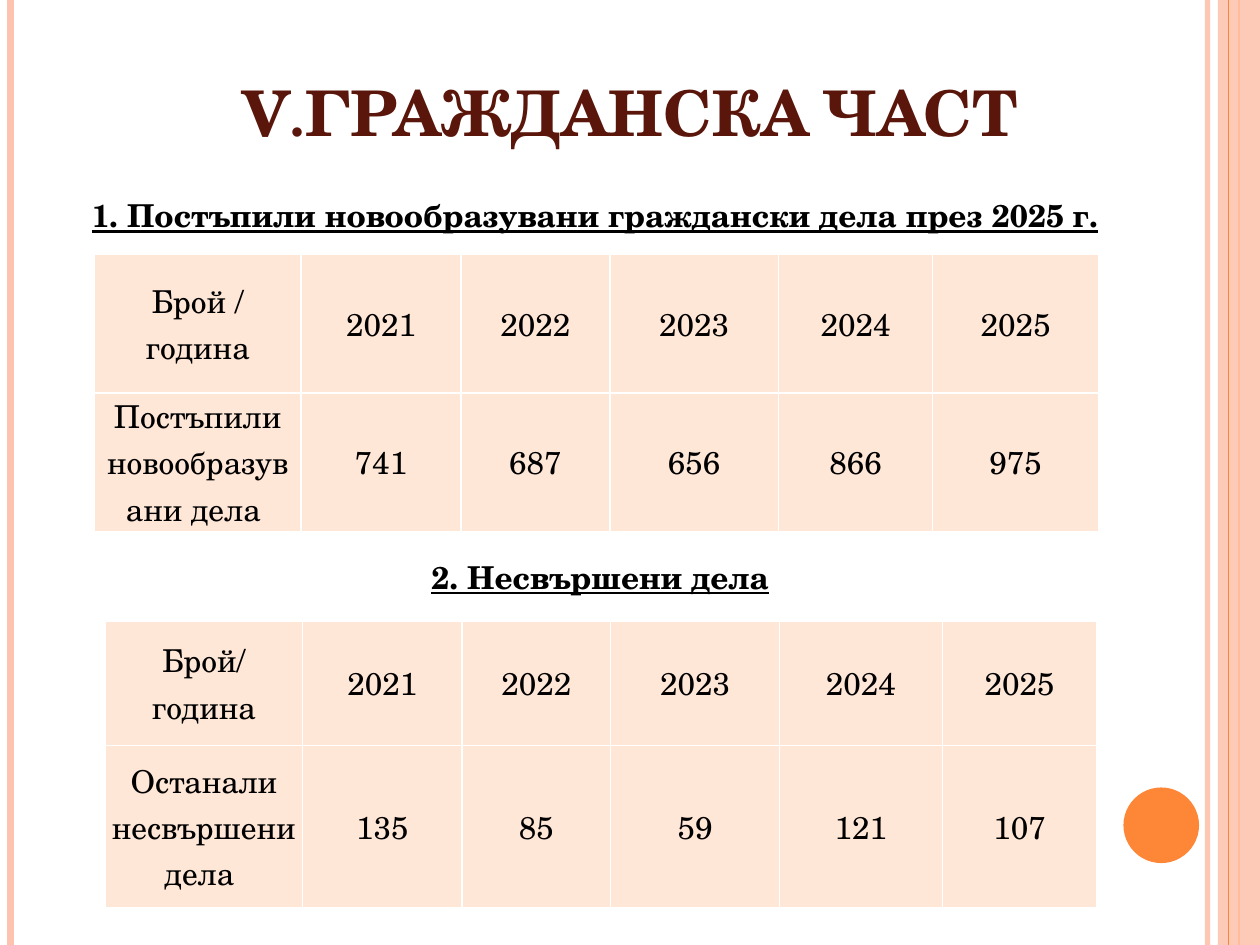
from dataclasses import dataclass

from lxml.etree import SubElement
from pptx import Presentation
from pptx.dml.color import RGBColor as Rgb
from pptx.enum.shapes import MSO_CONNECTOR as Link, MSO_SHAPE as Kind
from pptx.enum.text import MSO_ANCHOR as Anchor, PP_ALIGN as Align
from pptx.oxml.ns import qn
from pptx.util import Pt


@dataclass(frozen=True)
class Theme:
    font: str = "TeX Gyre Schola"
    rose: str = "FEC3AE"
    orange: str = "FE8637"
    brown: str = "5A160B"
    black: str = "000000"
    white: str = "FFFFFF"
    cell: str = "FFE7D7"
    title: float = 36
    body: float = 18


@dataclass(frozen=True)
class Stripe:
    x: float
    width: float
    color: str
    alpha: int = 100


@dataclass(frozen=True)
class Label:
    text: str
    box: tuple[float, float, float, float]
    size: float
    color: str
    align: Align = Align.CENTER
    anchor: Anchor = Anchor.TOP
    under: bool = False
    caps: bool = False


@dataclass(frozen=True)
class Grid:
    left: float
    top: float
    cols: tuple[float, ...]
    rows: tuple[float, ...]
    data: tuple[tuple[str, ...], ...]


THEME = Theme()
WIDTH, HEIGHT = 720, 540
YEARS = ("2021", "2022", "2023", "2024", "2025")

STRIPES = (
    Stripe(690, 3, THEME.rose, 93),
    Stripe(6, 4.5, THEME.rose),
    Stripe(708, 1.5, THEME.orange),
)
EDGE = Stripe(702, 0.75, THEME.orange)

LABELS = (
    Label("V.\tГРАЖДАНСКА ЧАСТ", (36, 21.6, 648, 67.2), THEME.title,
          THEME.brown, anchor=Anchor.BOTTOM, caps=True),
    Label("1. Постъпили новообразувани граждански дела през 2025 г.",
          (45.5, 108.7, 595.5, 29), THEME.body, THEME.black,
          align=Align.LEFT, under=True),
    Label("2. Несвършени дела", (54, 315.4, 578, 29), THEME.body,
          THEME.black, under=True),
)

GRIDS = (
    Grid(54, 145.5, (118, 91.5, 85, 96.5, 88, 95), (79, 75),
         (("Брой / година", *YEARS),
          ("Постъпили новообразувани дела ",
           "741", "687", "656", "866", "975"))),
    Grid(60, 355, (113, 91, 85, 96.5, 93, 88.5), (71, 93),
         (("Брой/\nгодина", *YEARS),
          ("Останали несвършени дела ", "135", "85", "59", "121", "107"))),
)


def fade(props, alpha: int) -> None:
    """Set the opacity, in percent, of the first colour under props."""
    if alpha < 100:
        color = next(props.iter(qn("a:srgbClr")))
        SubElement(color, qn("a:alpha")).set("val", str(alpha * 1000))


def style(frame, size: float, color: str, align: Align,
          bold: bool = False, under: bool = False, caps: bool = False) -> None:
    for para in frame.paragraphs:
        para.alignment = align
        for run in para.runs:
            font = run.font
            font.name, font.size = THEME.font, Pt(size)
            font.bold, font.underline = bold, under
            font.color.rgb = Rgb.from_string(color)
            if caps:
                run._r.get_or_add_rPr().set("cap", "small")


def draw_stripe(slide, item: Stripe) -> None:
    line = slide.shapes.add_connector(
        Link.STRAIGHT, Pt(item.x), Pt(0), Pt(item.x), Pt(HEIGHT))
    line.line.width = Pt(item.width)
    line.line.color.rgb = Rgb.from_string(item.color)
    props = line._element.spPr
    fade(props, item.alpha)
    SubElement(props, qn("a:effectLst"))


def draw_shape(slide, kind: Kind, box: tuple[float, float, float, float],
               color: str, alpha: int = 100) -> None:
    shape = slide.shapes.add_shape(kind, *map(Pt, box))
    shape.shadow.inherit = False
    shape.fill.solid()
    shape.fill.fore_color.rgb = Rgb.from_string(color)
    shape.line.fill.background()
    fade(shape._element.spPr, alpha)


def draw_label(slide, item: Label) -> None:
    frame = slide.shapes.add_textbox(*map(Pt, item.box)).text_frame
    frame.word_wrap = True
    frame.vertical_anchor = item.anchor
    frame.text = item.text
    style(frame, item.size, item.color, item.align,
          bold=True, under=item.under, caps=item.caps)


def draw_rim(cell) -> None:
    """Put a thin white border on all four sides of the cell."""
    props = cell._tc.get_or_add_tcPr()
    for spot, side in enumerate(("lnL", "lnR", "lnT", "lnB")):
        line = SubElement(props, qn(f"a:{side}"), w=str(Pt(1)))
        fill = SubElement(line, qn("a:solidFill"))
        SubElement(fill, qn("a:srgbClr"), val=THEME.white)
        props.insert(spot, line)


def draw_grid(slide, grid: Grid) -> None:
    table = slide.shapes.add_table(
        len(grid.rows), len(grid.cols), Pt(grid.left), Pt(grid.top),
        Pt(sum(grid.cols)), Pt(sum(grid.rows))).table
    table.first_row = table.horz_banding = False
    for col, width in zip(table.columns, grid.cols):
        col.width = Pt(width)
    for row, height, texts in zip(table.rows, grid.rows, grid.data):
        row.height = Pt(height)
        for cell, text in zip(row.cells, texts):
            cell.text_frame.text = text
            cell.vertical_anchor = Anchor.MIDDLE
            cell.margin_left = cell.margin_right = Pt(3.6)
            cell.margin_top = cell.margin_bottom = Pt(0)
            cell.fill.solid()
            cell.fill.fore_color.rgb = Rgb.from_string(THEME.cell)
            draw_rim(cell)
            style(cell.text_frame, THEME.body, THEME.black, Align.CENTER)


def main() -> None:
    deck = Presentation()
    deck.slide_width, deck.slide_height = Pt(WIDTH), Pt(HEIGHT)
    slide = deck.slides.add_slide(deck.slide_layouts[6])
    for item in STRIPES:
        draw_stripe(slide, item)
    draw_shape(slide, Kind.RECTANGLE, (696, 0, 24, HEIGHT), THEME.rose, 87)
    draw_stripe(slide, EDGE)
    draw_shape(slide, Kind.OVAL, (642, 450, 43.2, 43.2), THEME.orange)
    for grid in GRIDS:
        draw_grid(slide, grid)
    for label in LABELS:
        draw_label(slide, label)
    deck.save("out.pptx")


if __name__ == "__main__":
    main()
